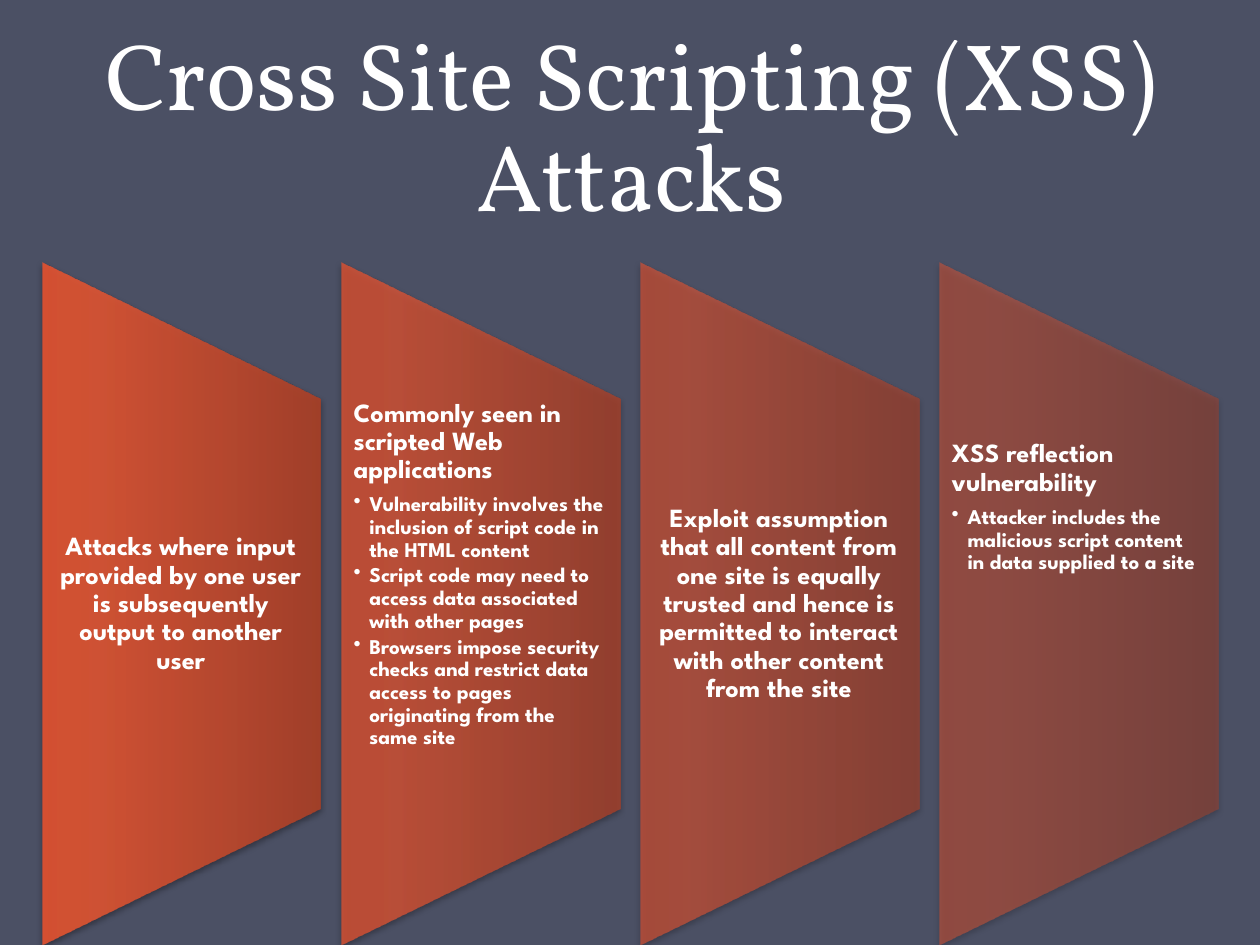
import pptx
import pptx.util
import pptx.dml.color
import pptx.enum.shapes
import pptx.enum.text
import pptx.oxml.ns
from lxml import etree

Pt = pptx.util.Pt
qn = pptx.oxml.ns.qn
ALIGN = pptx.enum.text.PP_ALIGN
ANCHOR = pptx.enum.text.MSO_ANCHOR

COLORS = {
    "background": "4B5064",
    "text": "FFFFFF",
    "shadow": "000000",
    "ember": "AB4027",
    "flame": "DE5433",
    "glow": "E35230",
}
GRADIENT = [(0, "ember"), (80, "flame"), (100, "glow")]

TITLE = "Cross Site Scripting (XSS) Attacks"
# Each panel: fill opacity in percent, top inset of its text, heading, bullets
PANELS = [
    (90, 0, "Attacks where input provided by one user is subsequently "
            "output to another user", []),
    (77, 0, "Commonly seen in scripted Web applications", [
        "Vulnerability involves the inclusion of script code in the HTML content",
        "Script code may need to access data associated with other pages",
        "Browsers impose security checks and restrict data access to pages "
        "originating from the same site",
    ]),
    (63, 0, "Exploit assumption that all content from one site is equally "
            "trusted and hence is permitted to interact with other content "
            "from the site", []),
    (50, 23.4, "XSS reflection vulnerability", [
        "Attacker includes the malicious script content in data supplied to a site",
    ]),
]

PANEL_LEFT, PANEL_TOP, PANEL_PITCH = 24.1, 149.8, 170.9
PANEL_WIDTH, PANEL_HEIGHT = 159.3, 390.2
TEXT_TOP, TEXT_HEIGHT = 228.2, 234


def rgb(name):
    return pptx.dml.color.RGBColor.from_string(COLORS[name])


def apply(target, values):
    for attribute, value in values.items():
        setattr(target, attribute, value)


def add_color(parent, name, opacity):
    color = etree.SubElement(parent, qn("a:srgbClr"), val=COLORS[name])
    etree.SubElement(color, qn("a:alpha"), val=str(opacity * 1000))


class SlideBuilder:
    title_font = {"name": "Vollkorn", "size": Pt(54), "bold": False}
    heading_font = {"name": "League Spartan", "size": Pt(15), "bold": True}
    bullet_font = {**heading_font, "size": Pt(12)}

    def __init__(self, slide):
        self.slide = slide
        background = slide.background.fill
        background.solid()
        background.fore_color.rgb = rgb("background")

    def add_text(self, paragraph, text, font, layout):
        run = paragraph.add_run()
        run.text = text
        apply(run.font, font)
        run.font.color.rgb = rgb("text")
        apply(paragraph, layout)

    def title(self, text, left, top, width, height):
        title = self.slide.shapes.title
        apply(title, {"left": Pt(left), "top": Pt(top),
                      "width": Pt(width), "height": Pt(height)})
        apply(title.text_frame, {
            "word_wrap": True,
            "vertical_anchor": ANCHOR.BOTTOM,
            "auto_size": pptx.enum.text.MSO_AUTO_SIZE.NONE,
        })
        self.add_text(title.text_frame.paragraphs[0], text, self.title_font,
                      {"alignment": ALIGN.CENTER, "line_spacing": Pt(58)})

    def panel(self, left, top, width, height, opacity):
        """Add a trapezoid turned a quarter to the left; the box is as seen."""
        panel = self.slide.shapes.add_shape(
            pptx.enum.shapes.MSO_SHAPE.FLOWCHART_MANUAL_OPERATION,
            Pt(left + (width - height) / 2), Pt(top + (height - width) / 2),
            Pt(height), Pt(width))
        panel.rotation = 270
        panel.line.fill.background()
        panel.fill.gradient()
        panel.fill.gradient_angle = 90
        properties = panel.element.spPr
        stops = properties.find(".//" + qn("a:gsLst"))
        for stop in list(stops):
            stops.remove(stop)
        for position, color in GRADIENT:
            stop = etree.SubElement(stops, qn("a:gs"), pos=str(position * 1000))
            add_color(stop, color, opacity)
        panel.shadow.inherit = False
        shadow = etree.SubElement(
            properties.find(qn("a:effectLst")), qn("a:outerShdw"),
            blurRad=str(Pt(3.1)), dist=str(Pt(1.8)), dir="5400000",
            rotWithShape="0")
        add_color(shadow, "shadow", 35)

    def panel_text(self, left, top, width, height, inset, heading, bullets):
        box = self.slide.shapes.add_textbox(Pt(left), Pt(top), Pt(width), Pt(height))
        frame = box.text_frame
        apply(frame, {
            "word_wrap": True,
            "margin_left": Pt(7.2), "margin_right": Pt(7.9),
            "margin_top": Pt(inset), "margin_bottom": 0,
            "vertical_anchor": ANCHOR.TOP if bullets else ANCHOR.MIDDLE,
        })
        self.add_text(frame.paragraphs[0], heading, self.heading_font, {
            "alignment": ALIGN.LEFT if bullets else ALIGN.CENTER,
            "line_spacing": 0.9, "space_after": Pt(5.25)})
        for bullet in bullets:
            self.bullet(frame.add_paragraph(), bullet)

    def bullet(self, paragraph, text):
        self.add_text(paragraph, text, self.bullet_font, {
            "level": 1, "alignment": ALIGN.LEFT,
            "line_spacing": 0.9, "space_after": Pt(1.8)})
        properties = paragraph._p.get_or_add_pPr()
        properties.set("marL", str(Pt(9)))
        properties.set("indent", str(-Pt(9)))
        etree.SubElement(properties, qn("a:buChar"), char="•")


def main():
    presentation = pptx.Presentation()
    apply(presentation, {"slide_width": Pt(720), "slide_height": Pt(540)})
    title_only = presentation.slide_layouts[5]
    builder = SlideBuilder(presentation.slides.add_slide(title_only))
    builder.title(TITLE, 36.7, 9.4, 648, 126)
    for column, (opacity, inset, heading, bullets) in enumerate(PANELS):
        left = PANEL_LEFT + column * PANEL_PITCH
        builder.panel(left, PANEL_TOP, PANEL_WIDTH, PANEL_HEIGHT, opacity)
        builder.panel_text(left, TEXT_TOP, PANEL_WIDTH, TEXT_HEIGHT,
                           inset, heading, bullets)
    presentation.save("out.pptx")


if __name__ == "__main__":
    main()
